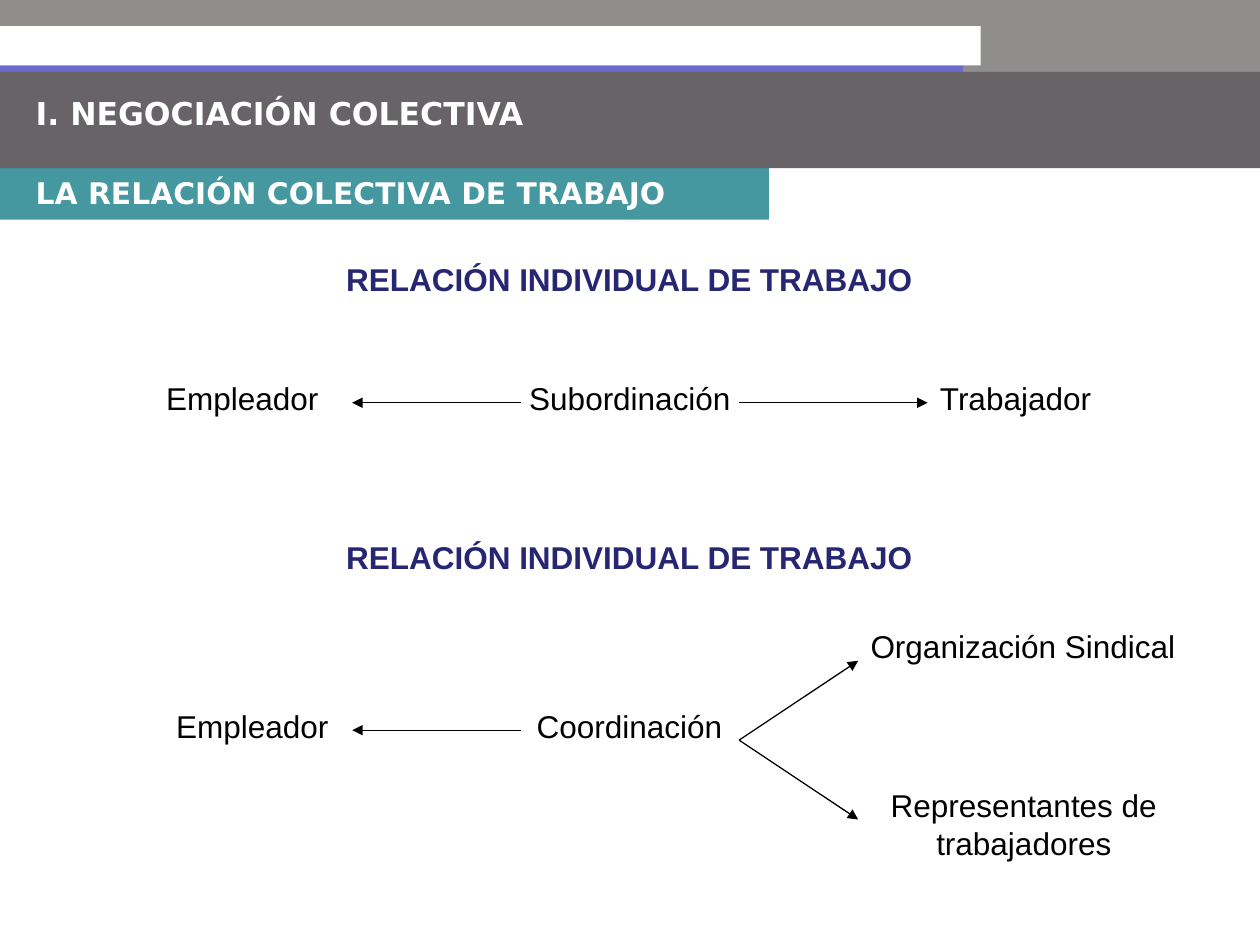
from lxml.etree import SubElement
from pptx import Presentation
from pptx.dml.color import RGBColor
from pptx.enum.shapes import MSO_CONNECTOR as CONN, MSO_SHAPE as SHAPE
from pptx.enum.text import MSO_AUTO_SIZE as AUTO, PP_ALIGN as ALIGN
from pptx.oxml.ns import qn
from pptx.util import Cm, Pt

COLORS = {
    "teal": "4597A0", "grey": "908E8D", "violet": "6B6BCF", "white": "FFFFFF",
    "dark": "676366", "navy": "262673", "black": "000000",
}
WIDTH, HEIGHT = 25.4, 19.05


def rgb(name):
    """Return the named palette colour."""
    return RGBColor.from_string(COLORS[name])


def add_bar(s, top, width, height, color):
    """Add a plain band starting at the left edge."""
    sp = s.shapes.add_shape(SHAPE.RECTANGLE, 0, Cm(top), Cm(width), Cm(height))
    sp.shadow.inherit = False
    sp.fill.solid()
    sp.fill.fore_color.rgb = rgb(color)
    sp.line.fill.background()


def add_text(s, text, left, top, width, height=1.02, *, size=18, font="Arial",
             color="black", bold=False, align=ALIGN.LEFT, wrap=False,
             inset=(0.25, 0.13)):
    """Add a text box with one paragraph per line of text."""
    sp = s.shapes.add_textbox(Cm(left), Cm(top), Cm(width), Cm(height))
    tf = sp.text_frame
    tf.word_wrap = wrap
    tf.auto_size = AUTO.SHAPE_TO_FIT_TEXT
    tf.margin_left = tf.margin_right = Cm(inset[0])
    tf.margin_top = tf.margin_bottom = Cm(inset[1])
    for i, line in enumerate(text.split("\n")):
        p = tf.add_paragraph() if i else tf.paragraphs[0]
        p.alignment = align
        r = p.add_run()
        r.text = line
        r.font.size = Pt(size)
        r.font.name = font
        r.font.bold = bold
        r.font.color.rgb = rgb(color)


def add_heading(s, text, top, width, height, size):
    """Add a white heading on one of the header bands."""
    add_text(s, text, 0.49, top, width, height, size=size, font="DejaVu Sans",
             color="white", bold=True, wrap=True, inset=(0.23, 0.11))


def add_arrow(s, x1, y1, x2, y2):
    """Add a thin black arrow pointing at its end."""
    c = s.shapes.add_connector(CONN.STRAIGHT, Cm(x1), Cm(y1), Cm(x2), Cm(y2))
    c.line.width = Pt(0.75)
    c.line.color.rgb = rgb("black")
    SubElement(c.line._get_or_add_ln(), qn("a:tailEnd"), type="triangle")
    SubElement(c._element.spPr, qn("a:effectLst"))


def add_header(s):
    """Add the header bands and their headings."""
    for bar in [
        (3.39, 15.5, 1.04, "teal"),
        (-0.28, WIDTH, 1.78, "grey"),
        (1.32, 19.41, 0.13, "violet"),
        (0.53, 19.77, 0.79, "white"),
        (1.45, WIDTH, 1.94, "dark"),
    ]:
        add_bar(s, *bar)
    add_heading(s, "I. NEGOCIACIÓN COLECTIVA", 1.79, 17.6, 0.99, 18)
    add_heading(s, "LA RELACIÓN COLECTIVA DE TRABAJO", 3.41, 14.81, 0.94, 17)


def add_relations(s):
    """Add the two relation diagrams."""
    for top in (5.12, 10.72):
        add_text(s, "RELACIÓN INDIVIDUAL DE TRABAJO", 6.73, top, 11.94,
                 color="navy", bold=True)
    for label in [
        ("Empleador", 3.1, 7.52, 3.6),
        ("Subordinación", 10.42, 7.52, 4.6),
        ("Trabajador", 18.7, 7.52, 3.6),
        ("Empleador", 3.3, 14.12, 3.6),
        ("Coordinación", 10.57, 14.12, 4.3),
        ("Organización Sindical", 17.3, 12.52, 6.7),
    ]:
        add_text(s, *label)
    add_text(s, "Representantes de\ntrabajadores", 17.7, 15.72, 5.88, 1.78,
             align=ALIGN.CENTER)

    left, right, fork = 10.5, 14.9, 14.92
    for y in (8.12, 14.72):
        add_arrow(s, left, y, 7.1, y)
    add_arrow(s, right, 8.12, 18.7, 8.12)
    for rise in (-1.6, 1.6):
        add_arrow(s, right, fork, 17.3, fork + rise)


def main():
    """Build the slide and save it."""
    prs = Presentation()
    prs.slide_width, prs.slide_height = Cm(WIDTH), Cm(HEIGHT)
    s = prs.slides.add_slide(prs.slide_layouts[6])
    add_header(s)
    add_relations(s)
    prs.save("out.pptx")


if __name__ == "__main__":
    main()
